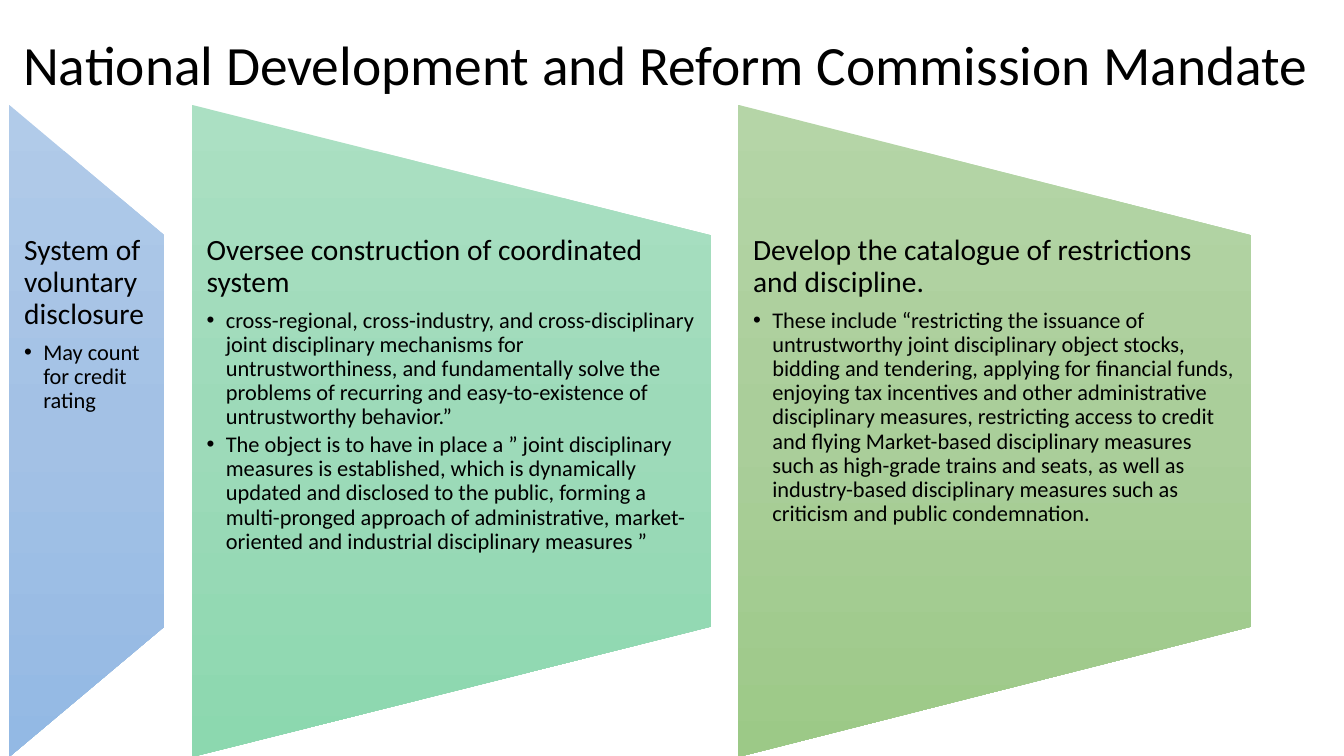
from lxml.etree import SubElement as Sub
from pptx import Presentation
from pptx.dml.color import RGBColor as Rgb
from pptx.enum.shapes import MSO_SHAPE as Shape
from pptx.enum.text import MSO_ANCHOR as Anchor, PP_ALIGN as Align
from pptx.oxml.ns import qn
from pptx.util import Inches, Pt

COLORS = {
    "text": "000000",
    "blue": ("B1CBE9", "A3C1E5", "93B9E4"),
    "mint": ("ABE0C3", "9DDAB9", "8CD8AF"),
    "green": ("B5D5A7", "AACE9A", "9CC987"),
}
TITLE = {"size": 39.6, "after": 0, "align": Align.CENTER, "bullet": False}
HEAD = {"size": 21, "after": 7.35, "align": Align.LEFT, "bullet": False}
ITEM = {"size": 16, "after": 2.4, "align": Align.LEFT, "bullet": True}
LEFT, TOP, TALL, GAP = 0.09, 1.04, 6.47, 0.27
PANELS = [
    ("blue", 1.54, "System of voluntary disclosure", ["May count for credit rating"]),
    ("mint", 5.15, "Oversee construction of coordinated system", [
        "cross-regional, cross-industry, and cross-disciplinary joint disciplinary "
        "mechanisms for untrustworthiness, and fundamentally solve the problems of "
        "recurring and easy-to-existence of untrustworthy behavior.”",
        "The object is to have in place a ” joint disciplinary measures is established, "
        "which is dynamically updated and disclosed to the public, forming a "
        "multi-pronged approach of administrative, market-oriented and industrial "
        "disciplinary measures ”",
    ]),
    ("green", 5.09, "Develop the catalogue of restrictions and discipline.", [
        "These include “restricting the issuance of untrustworthy joint disciplinary "
        "object stocks, bidding and tendering, applying for financial funds, enjoying "
        "tax incentives and other administrative disciplinary measures, restricting "
        "access to credit and flying Market-based disciplinary measures such as "
        "high-grade trains and seats, as well as industry-based disciplinary measures "
        "such as criticism and public condemnation.",
    ]),
]


def apply(target, values):
    for name, value in values.items():
        setattr(target, name, value)


def add_bullet(para):
    props = para._p.get_or_add_pPr()
    props.set("marL", str(Inches(0.19)))
    props.set("indent", str(-Inches(0.19)))
    Sub(props, qn("a:buFont")).set("typeface", "Arial")
    Sub(props, qn("a:buChar")).set("char", "•")


def add_text(slide, box, lines, pad, anchor):
    frame = slide.shapes.add_textbox(*map(Inches, box)).text_frame
    apply(frame, {
        "word_wrap": True, "vertical_anchor": anchor,
        "margin_left": Inches(pad), "margin_right": Inches(pad),
        "margin_top": 0, "margin_bottom": 0,
    })
    for i, (text, style) in enumerate(lines):
        para = frame.add_paragraph() if i else frame.paragraphs[0]
        if style["bullet"]:
            add_bullet(para)
        apply(para, {
            "alignment": style["align"], "line_spacing": 0.9,
            "space_before": Pt(0), "space_after": Pt(style["after"]),
        })
        run = para.add_run()
        run.text = text
        apply(run.font, {"name": "Calibri", "size": Pt(style["size"])})
        run.font.color.rgb = Rgb.from_string(COLORS["text"])


def fill_fade(shape, stops):
    shape.fill.gradient()
    fade = shape._element.spPr.find(qn("a:gradFill"))
    fade.set("rotWithShape", "0")
    for child in list(fade):
        fade.remove(child)
    group = Sub(fade, qn("a:gsLst"))
    for i, color in enumerate(stops):
        stop = Sub(group, qn("a:gs"), pos=str(i * 50000))
        Sub(stop, qn("a:srgbClr"), val=color)
    Sub(fade, qn("a:lin"), ang="5400000", scaled="0")


def add_panel(slide, left, wide, tone):
    box = (left + (wide - TALL) / 2, TOP + (TALL - wide) / 2, TALL, wide)
    shape = slide.shapes.add_shape(Shape.FLOWCHART_MANUAL_OPERATION, *map(Inches, box))
    shape.rotation = 270
    shape.shadow.inherit = False
    shape.line.fill.background()
    fill_fade(shape, COLORS[tone])


def main():
    deck = Presentation()
    apply(deck, {"slide_width": Inches(13.33), "slide_height": Inches(7.5)})
    slide = deck.slides.add_slide(deck.slide_layouts[6])
    title = "National Development and Reform Commission Mandate "
    add_text(slide, (0, 0, 13.33, 1.34), [(title, TITLE)], 0.1, Anchor.MIDDLE)
    left = LEFT
    for tone, wide, head, items in PANELS:
        add_panel(slide, left, wide, tone)
        lines = [(head, HEAD)] + [(item, ITEM) for item in items]
        add_text(slide, (left, TOP + TALL / 5, wide, TALL * 0.6), lines, 0.15, Anchor.TOP)
        left += wide + GAP
    deck.save("out.pptx")


if __name__ == "__main__":
    main()
